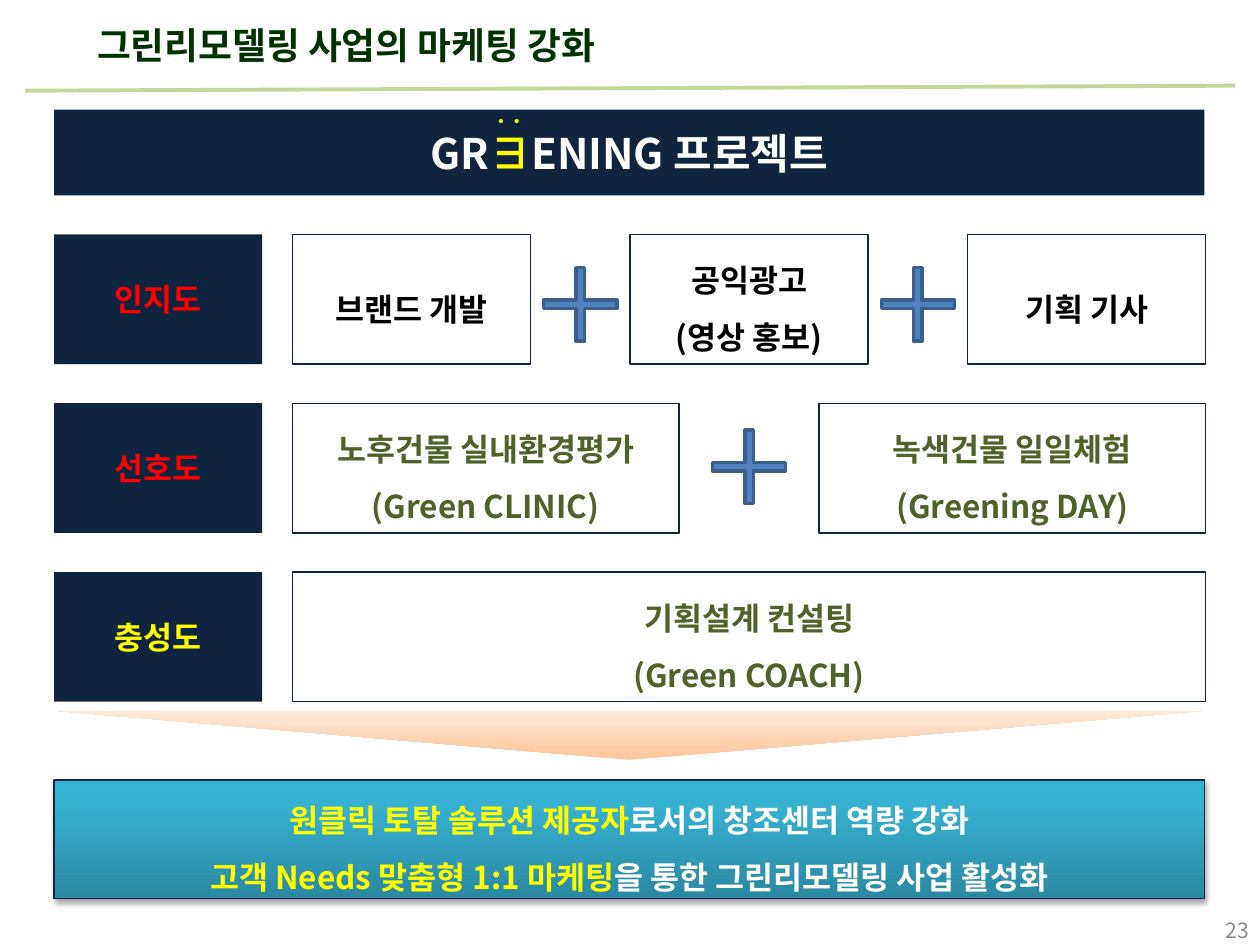
from lxml import etree
from pptx import Presentation
from pptx.dml.color import RGBColor
from pptx.enum.shapes import MSO_CONNECTOR, MSO_SHAPE
from pptx.enum.text import MSO_ANCHOR, MSO_AUTO_SIZE, PP_ALIGN
from pptx.oxml.ns import qn
from pptx.util import Inches, Pt

RECT, ROUND = MSO_SHAPE.RECTANGLE, MSO_SHAPE.ROUNDED_RECTANGLE
PLUS, PLATE = MSO_SHAPE.MATH_PLUS, MSO_SHAPE.PENTAGON
LEFT, MID, RIGHT = PP_ALIGN.LEFT, PP_ALIGN.CENTER, PP_ALIGN.RIGHT
TOP, CENTER = MSO_ANCHOR.TOP, MSO_ANCHOR.MIDDLE

FACE = "Noto Sans CJK KR"
HUES = {
    "navy": "0F243E", "white": "FFFFFF", "black": "000000", "red": "FF0000",
    "yellow": "FFFF00", "olive": "4F6228", "forest": "003300", "gray": "8C8C8C",
    "lime": "C3D69B", "blue": "4F81BD", "edge": "3A5F8C",
}
PEACH = [(0, "FBC599"), (100, "FDEADA")]
TEAL = [(0, "2A88A2"), (80, "37B1D2"), (100, "34B4D6")]

# A text is a list of lines; a line is a list of (words, colour) runs.
TITLE = [[("그린리모델링 사업의 마케팅 강화", "forest")]]
HEAD = [[("GR", "white"), ("∃", "yellow"), ("ENING 프로젝트", "white")]]
GOAL = [
    [("원클릭 토탈 솔루션 제공자", "yellow"), ("로서의 창조센터 역량 강화", "white")],
    [("고객 Needs 맞춤형 1:1 마케팅", "yellow"),
     ("을 통한 그린리모델링 사업 활성화", "white")],
]
ROWS = [
    {"name": "인지도", "hue": "red", "ink": "black", "wide": 1.89, "plus": 2.02,
     "boxes": [["브랜드 개발"], ["공익광고", "(영상 홍보)"], ["기획 기사"]]},
    {"name": "선호도", "hue": "red", "ink": "olive", "wide": 3.07, "plus": 3.31,
     "boxes": [["노후건물 실내환경평가", "(Green CLINIC)"],
               ["녹색건물 일일체험", "(Greening DAY)"]]},
    {"name": "충성도", "hue": "yellow", "ink": "olive", "wide": 7.25, "plus": None,
     "boxes": [["기획설계 컨설팅", "(Green COACH)"]]},
]
EDGE, FULL = 0.43, 9.13
BODY, SPAN = 2.32, 7.25
FIRST, STEP, TALL = 1.86, 1.34, 1.03
SIGN = 0.79


def color(name):
    return RGBColor.from_string(HUES[name])


def write(shape, lines, size=18, bold=True, align=MID, anchor=CENTER,
          wrap=True, space=None):
    frame = shape.text_frame
    form = {"word_wrap": wrap, "auto_size": MSO_AUTO_SIZE.NONE,
            "vertical_anchor": anchor}
    for key, value in form.items():
        setattr(frame, key, value)
    for i, line in enumerate(lines):
        para = frame.add_paragraph() if i else frame.paragraphs[0]
        para.alignment = align
        if space:
            para.line_spacing = space
        for words, hue in line:
            run = para.add_run()
            run.text = words
            for key, value in {"name": FACE, "size": Pt(size), "bold": bold}.items():
                setattr(run.font, key, value)
            run.font.color.rgb = color(hue)
            latin = run.font._element.find(qn("a:latin"))
            east = etree.Element(qn("a:ea"), typeface=FACE)
            latin.addnext(east)


def draw(slide, kind, spot, fill=None, line=None, weight=0.75):
    shape = slide.shapes.add_shape(kind, *map(Inches, spot))
    shape.shadow.inherit = False
    if fill:
        shape.fill.solid()
        shape.fill.fore_color.rgb = color(fill)
    else:
        shape.fill.background()
    if line:
        shape.line.color.rgb = color(line)
        shape.line.width = Pt(weight)
    else:
        shape.line.fill.background()
    return shape


def blend(shape, stops, angle):
    """Fill with any number of gradient stops; angle runs anticlockwise."""
    shape.fill.gradient()
    shape.fill.gradient_angle = angle
    group = shape._element.spPr.find(".//" + qn("a:gsLst"))
    for old in list(group):
        group.remove(old)
    for at, hue in stops:
        stop = etree.SubElement(group, qn("a:gs"), pos=str(at * 1000))
        etree.SubElement(stop, qn("a:srgbClr"), val=hue)


def shade(shape):
    effects = shape._element.spPr.find(qn("a:effectLst"))
    outer = etree.SubElement(
        effects, qn("a:outerShdw"), blurRad=str(Pt(3.1)), dist=str(Pt(1.8)),
        dir="5400000", rotWithShape="0")
    tint = etree.SubElement(outer, qn("a:srgbClr"), val=HUES["black"])
    etree.SubElement(tint, qn("a:alpha"), val="35000")


def label(slide, spot, lines, **form):
    write(slide.shapes.add_textbox(*map(Inches, spot)), lines, **form)


def add_row(slide, row, top):
    tag = draw(slide, RECT, (EDGE, top, 1.65, TALL), "navy")
    write(tag, [[(row["name"], row["hue"])]])
    wide, count = row["wide"], len(row["boxes"])
    gap = (SPAN - count * wide) / max(count - 1, 1)
    for i, lines in enumerate(row["boxes"]):
        left = BODY + i * (wide + gap)
        box = draw(slide, RECT, (left, top, wide, TALL), line="navy")
        write(box, [[(words, row["ink"])] for words in lines], space=1.5)
        if i:
            spot = (left - (gap + SIGN) / 2, row["plus"], SIGN, SIGN)
            plus = draw(slide, PLUS, spot, "blue", "edge", 2)
            plus.adjustments[0] = 0.086


def main():
    deck = Presentation()
    deck.slide_width, deck.slide_height = Inches(10), Inches(7.5)
    slide = deck.slides.add_slide(deck.slide_layouts[5])

    ends = map(Inches, (0.2, 0.72, 9.8, 0.68))
    rule = slide.shapes.add_connector(MSO_CONNECTOR.STRAIGHT, *ends)
    rule.line.color.rgb = color("lime")
    rule.line.width = Pt(2.25)
    etree.SubElement(rule._element.spPr, qn("a:effectLst"))

    title = slide.shapes.title
    for key, value in zip(("left", "top", "width", "height"), (0.67, 0.13, 7.4, 0.45)):
        setattr(title, key, Inches(value))
    write(title, TITLE, size=21, align=LEFT, anchor=TOP)
    label(slide, (7.68, 7.24, 2.33, 0.29), [[("23", "gray")]],
          size=12, bold=False, align=RIGHT)

    write(draw(slide, RECT, (EDGE, 0.87, FULL, 0.68), "navy"), HEAD, size=24)
    label(slide, (3.82, 0.76, 0.31, 0.4), [[("‥", "yellow")]],
          bold=False, align=LEFT, anchor=TOP, wrap=False)

    for i, row in enumerate(ROWS):
        add_row(slide, row, FIRST + i * STEP)

    arrow = draw(slide, PLATE, (4.8, 1.27, 0.39, FULL))
    arrow.rotation = 90
    arrow.adjustments[0] = 1
    blend(arrow, PEACH, 180)

    goal = draw(slide, ROUND, (EDGE, 6.19, FULL, 0.94), line="navy")
    goal.adjustments[0] = 0
    blend(goal, TEAL, 90)
    shade(goal)
    write(goal, GOAL, wrap=False, space=1.5)
    deck.save("out.pptx")


if __name__ == "__main__":
    main()
